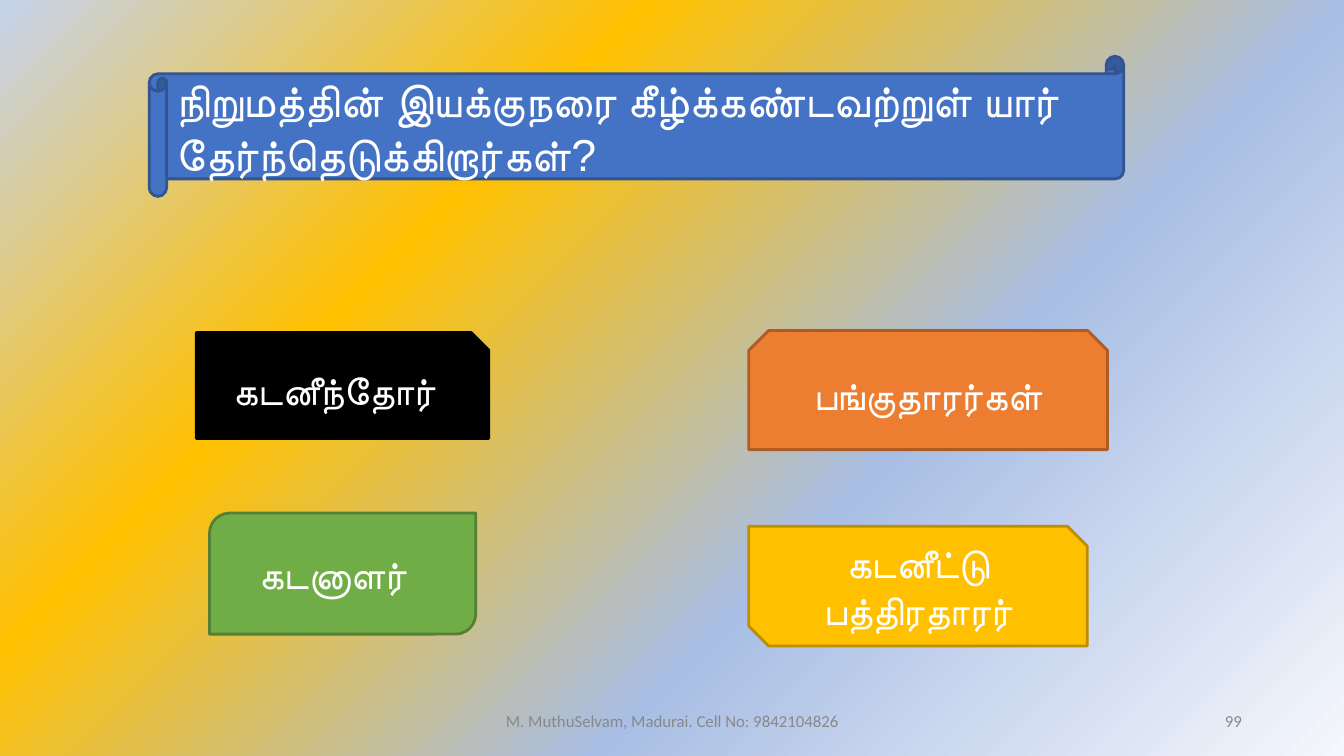
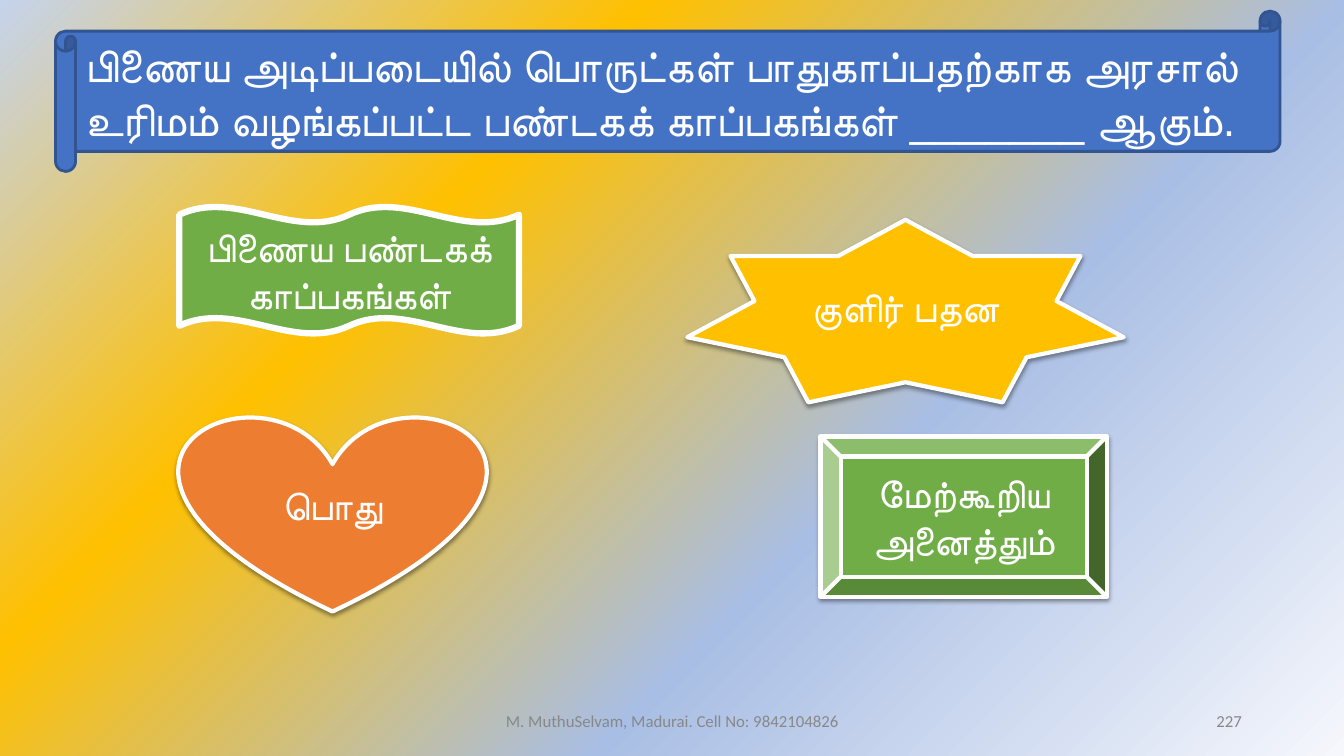
import pptx
import pptx.dml.color
import pptx.enum.shapes
import pptx.enum.text
import pptx.oxml
import pptx.oxml.ns
import pptx.util

Cm = pptx.util.Cm
Pt = pptx.util.Pt
Kind = pptx.enum.shapes.MSO_SHAPE
Align = pptx.enum.text.PP_ALIGN
Anchor = pptx.enum.text.MSO_ANCHOR
qn = pptx.oxml.ns.qn
space = pptx.oxml.ns.nsdecls("a")


class Theme:
    white, black, gray = "FFFFFF", "000000", "888888"
    blue, navy = "4472C4", "325491"
    orange, rust = "ED7D31", "AF5C24"
    gold, amber = "FFC000", "BD8E00"
    green, moss = "70AD47", "538035"
    stops = [(0, "F5F7FC"), (36, "A9BEE4"), (69, "FFC000"), (100, "C5D3ED")]
    body, small = "Arial", "Calibri"
    title, choice, foot = 32, 28, 12
    thin, mid, thick = 2, 3, 4.5


def write(shape, text, size, font, color, align):
    frame = shape.text_frame
    frame.word_wrap = True
    frame.vertical_anchor = Anchor.MIDDLE
    para = frame.paragraphs[0]
    para.text = text
    para.alignment = align
    para.font.size = Pt(size)
    para.font.name = font
    para.font.color.rgb = pptx.dml.color.RGBColor.from_string(color)


def draw(slide, kind, box, fill, line, width, text, size, align):
    shape = slide.shapes.add_shape(kind, *map(Cm, box))
    shape.shadow.inherit = False
    shape.fill.solid()
    shape.fill.fore_color.rgb = pptx.dml.color.RGBColor.from_string(fill)
    shape.line.color.rgb = pptx.dml.color.RGBColor.from_string(line)
    shape.line.width = Pt(width)
    write(shape, text, size, Theme.body, Theme.white, align)
    return shape


show = pptx.Presentation()
show.slide_width = Cm(33.87)
show.slide_height = Cm(19.05)

master = show.slide_master
master.background.fill.gradient()
old = master.element.find(".//" + qn("a:gradFill"))
stops = "".join(
    f'<a:gs pos="{pos * 1000}"><a:srgbClr val="{color}"/></a:gs>'
    for pos, color in Theme.stops
)
old.getparent().replace(old, pptx.oxml.parse_xml(
    f'<a:gradFill {space} rotWithShape="1"><a:gsLst>{stops}</a:gsLst>'
    '<a:path path="circle"><a:fillToRect l="100000" t="100000"/></a:path>'
    '<a:tileRect r="-100000" b="-100000"/></a:gradFill>'
))

shade = (
    f'<a:outerShdw {space} blurRad="40000" dist="20000" dir="5400000" rotWithShape="0">'
    f'<a:srgbClr val="{Theme.black}"><a:alpha val="38000"/></a:srgbClr></a:outerShdw>'
)

pages = [
    (
        "99",
        "நிறுமத்தின் இயக்குநரை கீழ்க்கண்டவற்றுள் யார் தேர்ந்தெடுக்கிறார்கள்?",
        (3.76, 1.42, 24.56, 3.53),
        [
            (Kind.SNIP_1_RECTANGLE, (4.95, 8.38, 7.37, 2.67),
             Theme.black, Theme.black, Theme.thin, False, 0.45, "கடனீந்தோர்"),
            (Kind.SNIP_2_SAME_RECTANGLE, (18.87, 8.33, 9.04, 3),
             Theme.orange, Theme.rust, Theme.thin, False, 0.25, "பங்குதாரர்கள்"),
            (Kind.SNIP_2_DIAG_RECTANGLE, (18.87, 13.26, 8.53, 3.02),
             Theme.gold, Theme.amber, Theme.thin, False, 0.25, "கடனீட்டு பத்திரதாரர்"),
            (Kind.ROUND_2_DIAG_RECTANGLE, (5.28, 12.93, 6.71, 3.05),
             Theme.green, Theme.moss, Theme.thin, False, 0.75, "கடனாளர்"),
        ],
    ),
    (
        "227",
        "பிணைய அடிப்படையில் பொருட்கள் பாதுகாப்பதற்காக அரசால் உரிமம் "
        "வழங்கப்பட்ட பண்டகக் காப்பகங்கள் _______ ஆகும்.",
        (1.4, 0.28, 30.86, 4.04),
        [
            (Kind.HEART, (4.52, 10.46, 7.72, 4.95),
             Theme.orange, Theme.white, Theme.mid, True, 0.25, "பொது"),
            (Kind.STAR_7_POINT, (17.32, 5.54, 11, 4.6),
             Theme.gold, Theme.white, Theme.mid, True, 0.25, "குளிர் பதன"),
            (Kind.BEVEL, (20.68, 11, 7.21, 4.04),
             Theme.green, Theme.white, Theme.mid, True, 0.25, "மேற்கூறிய அனைத்தும்"),
            (Kind.DOUBLE_WAVE, (4.52, 5.21, 8.56, 3.2),
             Theme.green, Theme.white, Theme.thick, False, 0.25, "பிணைய பண்டகக் காப்பகங்கள்"),
        ],
    ),
]

for number, question, scroll, choices in pages:
    slide = show.slides.add_slide(show.slide_layouts[6])
    for kind, box, fill, line, width, lift, pad, text in choices:
        shape = draw(slide, kind, box, fill, line, width, text, Theme.choice, Align.CENTER)
        shape.text_frame.margin_right = Cm(pad)
        if lift:
            shape.element.spPr.find(qn("a:effectLst")).append(pptx.oxml.parse_xml(shade))
    draw(slide, Kind.HORIZONTAL_SCROLL, scroll, Theme.blue, Theme.navy,
         Theme.thin, question, Theme.title, Align.LEFT)
    for left, width, text, align in [
        (11.23, 11.43, "M. MuthuSelvam, Madurai. Cell No: 9842104826", Align.CENTER),
        (23.93, 7.62, number, Align.RIGHT),
    ]:
        label = slide.shapes.add_textbox(Cm(left), Cm(17.65), Cm(width), Cm(1.02))
        write(label, text, Theme.foot, Theme.small, Theme.gray, align)

show.save("out.pptx")
